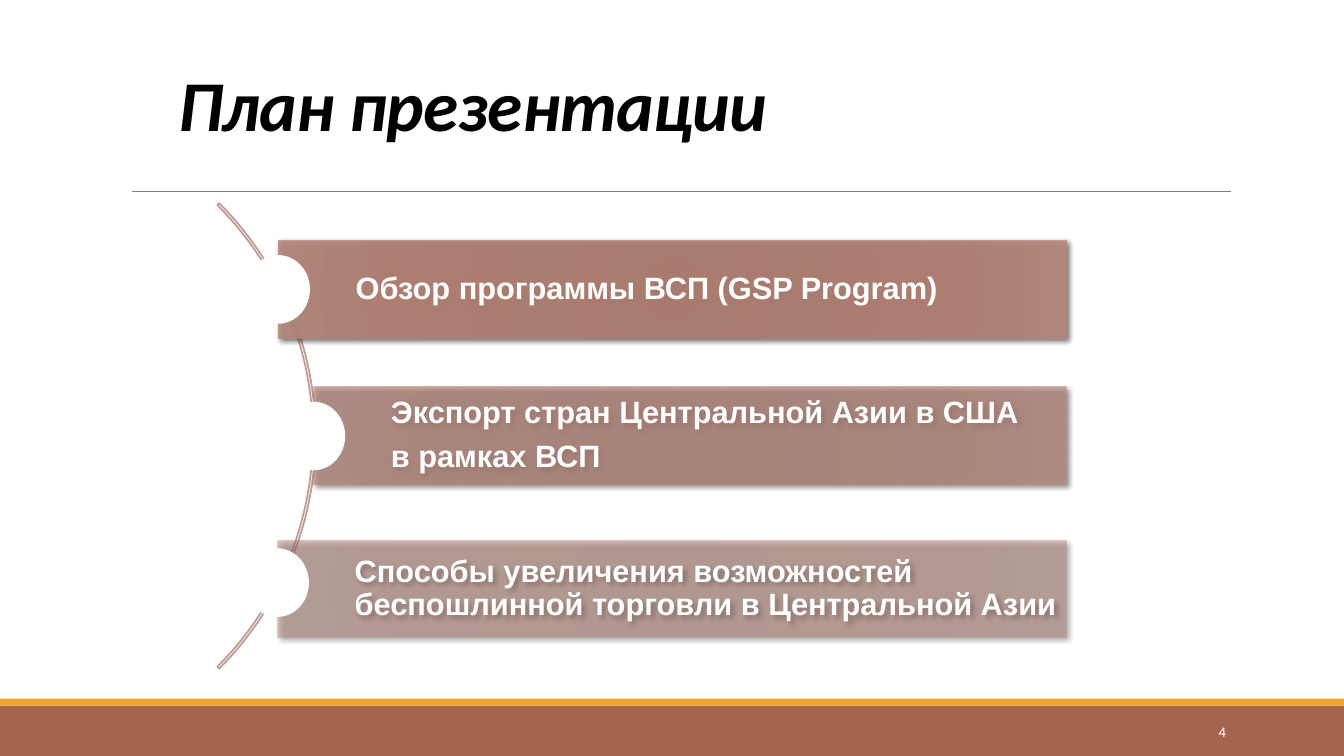
from lxml import etree
from pptx import Presentation
from pptx.dml.color import RGBColor
from pptx.enum.shapes import MSO_CONNECTOR as CONNECTOR, MSO_SHAPE as SHAPE
from pptx.enum.text import MSO_ANCHOR as ANCHOR, MSO_AUTO_SIZE as AUTO_SIZE, PP_ALIGN as ALIGN
from pptx.oxml import parse_xml
from pptx.oxml.ns import nsdecls, qn
from pptx.util import Pt

BAR_RIGHT = 761.8
BAR_HEIGHT = 69.8
BAR_STOPS = [(0, "B07D70"), (34, "B17F72"), (70, "B48073"), (100, "B8897D")]
MARKER_TOP = 182.2
MARKER_PITCH = 104.75
TOPICS = [
    (198.7, 172.1, 90, ["Обзор программы ВСП (GSP Program)"]),
    (223.9, 276.5, 70, ["Экспорт стран Центральной Азии в США", "в рамках ВСП"]),
    (198, 385.9, 50, ["Способы увеличения возможностей беспошлинной торговли в Центральной Азии"]),
]


def colour(hex_value):
    """Return the colour for a hex string."""
    return RGBColor.from_string(hex_value)


def add_run(paragraph, text, size, font, hex_value, bold=False, italic=False):
    """Add one formatted run and return it."""
    run = paragraph.add_run()
    run.text = text
    run.font.size = Pt(size)
    run.font.name = font
    run.font.bold = bold
    run.font.italic = italic
    run.font.color.rgb = colour(hex_value)
    return run


def add_plain_shape(slide, kind, left, top, width, height, fill=None):
    """Add a preset shape without outline or shadow."""
    shape = slide.shapes.add_shape(kind, Pt(left), Pt(top), Pt(width), Pt(height))
    shape.shadow.inherit = False
    shape.line.fill.background()
    if fill:
        shape.fill.solid()
        shape.fill.fore_color.rgb = colour(fill)
    else:
        shape.fill.background()
    return shape


def add_rule(slide, left, right, top):
    """Add the thin grey line under the title."""
    rule = slide.shapes.add_connector(CONNECTOR.STRAIGHT, Pt(left), Pt(top), Pt(right), Pt(top))
    rule.line.color.rgb = colour("808080")
    rule.line.width = Pt(0.5)
    etree.SubElement(rule._element.spPr, qn("a:effectLst"))


def set_title(slide, text):
    """Place and fill the title placeholder."""
    title = slide.shapes.title
    title.left, title.top, title.width, title.height = Pt(120), Pt(18), Pt(720), Pt(90)
    frame = title.text_frame
    frame.auto_size = AUTO_SIZE.NONE
    frame.vertical_anchor = ANCHOR.BOTTOM
    heading = frame.paragraphs[0]
    heading.alignment = ALIGN.LEFT
    heading.line_spacing = 0.85
    run = add_run(heading, text, 51, "Calibri", "000000", bold=True, italic=True)
    run.font._element.set("spc", "-50")


def add_page_number(slide, number):
    """Add the page number in the footer band."""
    box = slide.shapes.add_textbox(Pt(779.8), Pt(508.3), Pt(103), Pt(28.8))
    frame = box.text_frame
    frame.word_wrap = True
    frame.vertical_anchor = ANCHOR.MIDDLE
    frame.paragraphs[0].alignment = ALIGN.RIGHT
    add_run(frame.paragraphs[0], number, 10.5, "Calibri", "FFFFFF")


def add_arc(slide):
    """Add the curve that links the topics."""
    arc = add_plain_shape(slide, SHAPE.BLOCK_ARC, -244.8, 76.3, 470.2, 470.2)
    for index, value in enumerate((189, 27, 0.004)):
        arc.adjustments[index] = value
    arc.line.color.rgb = colour("BE9C94")
    arc.line.width = Pt(1.25)


def style_bar(bar, opacity):
    """Give a bar its translucent radial gradient and soft shadow."""
    stops = "".join(
        f'<a:gs pos="{position * 1000}"><a:srgbClr val="{hex_value}">'
        f'<a:alpha val="{opacity * 1000}"/></a:srgbClr></a:gs>'
        for position, hex_value in BAR_STOPS
    )
    gradient = parse_xml(
        f'<a:gradFill {nsdecls("a")} rotWithShape="1"><a:gsLst>{stops}</a:gsLst>'
        '<a:path path="circle"><a:fillToRect l="100000" t="100000" r="100000" b="100000"/>'
        '</a:path></a:gradFill>'
    )
    shadow = parse_xml(
        f'<a:outerShdw {nsdecls("a")} blurRad="{Pt(3.5)}" dist="{Pt(2)}" dir="2700000" '
        'algn="tl" rotWithShape="0"><a:srgbClr val="000000"><a:alpha val="60000"/>'
        '</a:srgbClr></a:outerShdw>'
    )
    properties = bar._element.spPr
    properties.replace(properties.find(qn("a:noFill")), gradient)
    properties.find(qn("a:effectLst")).append(shadow)


def add_topic(slide, left, top, opacity, lines, marker_top):
    """Add one topic bar with its text and round marker."""
    bar = add_plain_shape(slide, SHAPE.RECTANGLE, left, top, BAR_RIGHT - left, BAR_HEIGHT)
    style_bar(bar, opacity)
    frame = bar.text_frame
    frame.word_wrap = True
    frame.vertical_anchor = ANCHOR.MIDDLE
    frame.margin_left = Pt(55.4)
    frame.margin_top = frame.margin_right = frame.margin_bottom = Pt(4.3)
    for index, line in enumerate(lines):
        paragraph = frame.add_paragraph() if index else frame.paragraphs[0]
        paragraph.alignment = ALIGN.LEFT
        paragraph.line_spacing = 0.9
        paragraph.space_after = Pt(7.7)
        add_run(paragraph, line, 22, "Arial", "FFFFFF", bold=True)
    add_plain_shape(slide, SHAPE.OVAL, left - 22.7, marker_top, 45.4, 49, "FFFFFF")


def main():
    """Build and save the slide."""
    deck = Presentation()
    deck.slide_width, deck.slide_height = Pt(960), Pt(540)
    slide = deck.slides.add_slide(deck.slide_layouts[5])
    add_plain_shape(slide, SHAPE.RECTANGLE, 0, 504, 960, 36, "A5644E")
    add_plain_shape(slide, SHAPE.RECTANGLE, 0, 499, 960, 5, "F0A22E")
    add_rule(slide, 94.3, 879, 136.8)
    set_title(slide, "План презентации")
    add_page_number(slide, "4")
    add_arc(slide)
    for index, topic in enumerate(TOPICS):
        add_topic(slide, *topic, MARKER_TOP + index * MARKER_PITCH)
    deck.save("out.pptx")


if __name__ == "__main__":
    main()
